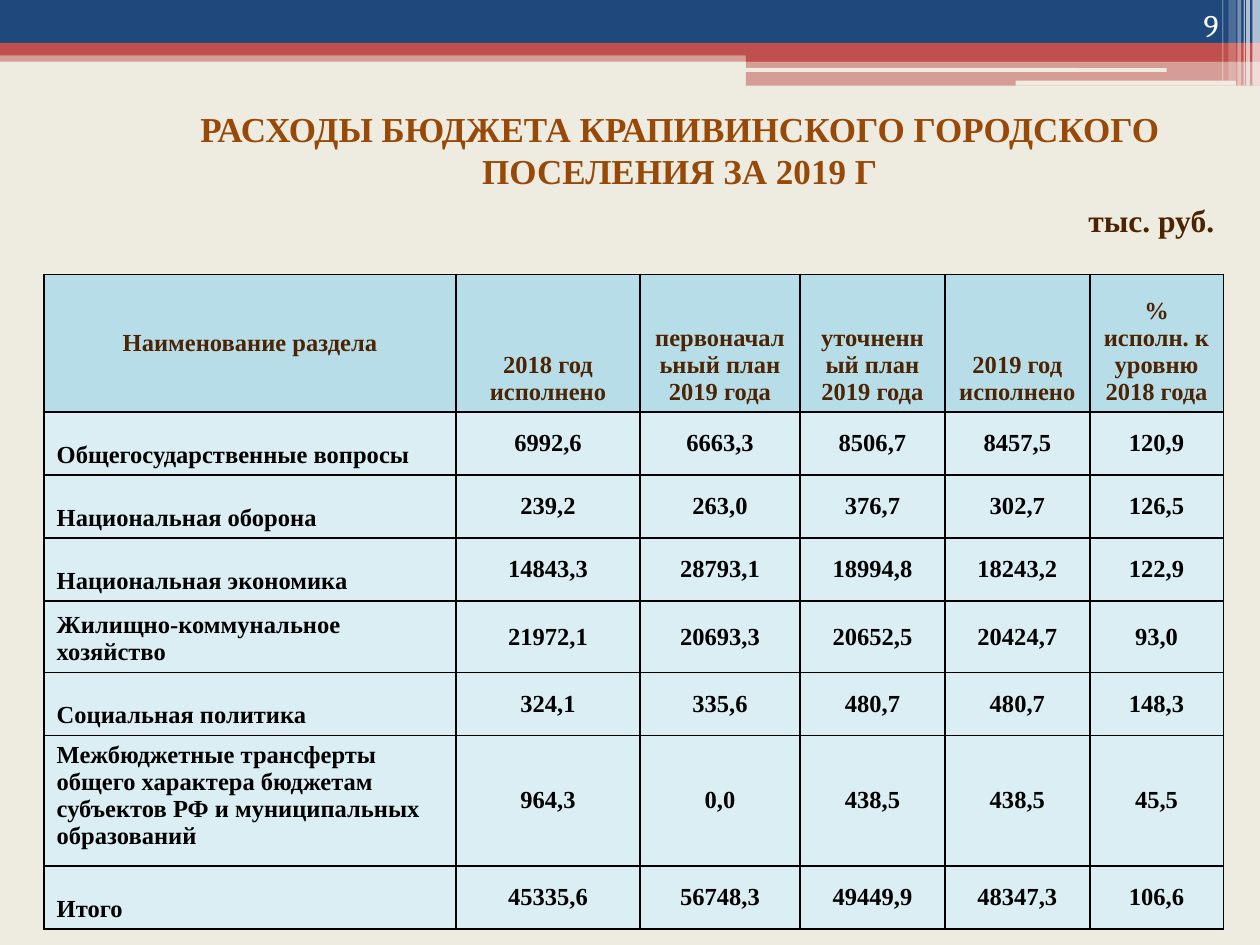
import dataclasses

import lxml.etree
import pptx
import pptx.dml.color
import pptx.enum.shapes
import pptx.enum.text
import pptx.oxml
import pptx.oxml.ns
import pptx.util

QN = pptx.oxml.ns.qn
ALIGN = pptx.enum.text.PP_ALIGN
ANCHOR = pptx.enum.text.MSO_ANCHOR
SHAPE = pptx.enum.shapes.MSO_SHAPE
UNIT = pptx.util.Inches(0.1)  # the slide is a grid of 100 columns by 75 rows


@dataclasses.dataclass(frozen=True)
class Theme:
    paper: str = "EEECE1"
    navy: str = "1F497D"
    red: str = "C0504D"
    white: str = "FFFFFF"
    black: str = "000000"
    title: str = "984807"
    brown: str = "4D2403"
    head: str = "B7DEE8"
    body: str = "DBEEF4"
    serif: str = "Times New Roman"
    number: str = "Cambria"
    large: int = 20
    mid: int = 18
    small: int = 14
    border: int = 1


THEME = Theme()

# column, row, columns wide, rows high, colour, opacity in percent
BANDS = [
    (0, 4, 100, 0.9, THEME.red, 50),
    (0, 0, 100, 3.4, THEME.navy, 100),
    (0, 3.4, 100, 1, THEME.red, 100),
    (59.2, 3.9, 40.8, 1, THEME.red, 100),
    (59.2, 4.8, 40.8, 2, THEME.red, 50),
]
SLOTS = [
    (59.1, 5.4, 33.5, 0.3, THEME.paper, 100),
    (80.6, 6.4, 17.5, 0.4, THEME.paper, 100),
]
# column, columns wide, rows high, opacity in percent
STRIPES = [
    (99.4, 0.6, 6.8, 65),
    (98.9, 0.3, 6.8, 65),
    (98.7, 0.1, 6.8, 60),
    (98.2, 0.3, 6.8, 40),
    (97.5, 0.6, 6.4, 20),
    (97, 0.1, 6.4, 30),
]

COLS = [32.7, 14.6, 12.7, 11.5, 11.5, 10.6]
ROWS = [10.9, 5, 5, 5, 5, 5, 8.9, 5]
DATA = [
    ["Наименование раздела", "2018 год исполнено", "первоначальный план 2019 года",
     "уточненный план 2019 года", "2019 год исполнено", "% исполн. к уровню 2018 года"],
    ["Общегосударственные вопросы", "6992,6", "6663,3", "8506,7", "8457,5", "120,9"],
    ["Национальная оборона", "239,2", "263,0", "376,7", "302,7", "126,5"],
    ["Национальная экономика", "14843,3", "28793,1", "18994,8", "18243,2", "122,9"],
    ["Жилищно-коммунальное хозяйство", "21972,1", "20693,3", "20652,5", "20424,7", "93,0"],
    ["Социальная политика", "324,1", "335,6", "480,7", "480,7", "148,3"],
    ["Межбюджетные трансферты общего характера бюджетам субъектов РФ и "
     "муниципальных образований", "964,3", "0,0", "438,5", "438,5", "45,5"],
    ["Итого", "45335,6", "56748,3", "49449,9", "48347,3", "106,6"],
]
LONG_ROW = 6


def grid(*cells):
    return [round(cell * UNIT) for cell in cells]


def rgb(code):
    return pptx.dml.color.RGBColor.from_string(code)


def paint(item, color):
    item.fill.solid()
    item.fill.fore_color.rgb = rgb(color)


def write(frame, text, size, color, align, anchor, font=THEME.serif, bold=True):
    frame.text = text
    frame.word_wrap = True
    frame.vertical_anchor = anchor
    for para in frame.paragraphs:
        para.alignment = align
        for run in para.runs:
            run.font.name = font
            run.font.size = pptx.util.Pt(size)
            run.font.bold = bold
            run.font.color.rgb = rgb(color)


def add_bar(slide, box, color, alpha=100, kind=SHAPE.RECTANGLE):
    bar = slide.shapes.add_shape(kind, *grid(*box))
    bar.shadow.inherit = False
    bar.line.fill.background()
    paint(bar, color)
    if alpha < 100:
        tint = bar.element.spPr.find(".//" + QN("a:srgbClr"))
        lxml.etree.SubElement(tint, QN("a:alpha")).set("val", str(alpha * 1000))


def add_decor(slide):
    for *box, color, alpha in BANDS:
        add_bar(slide, box, color, alpha)
    for *box, color, alpha in SLOTS:
        add_bar(slide, box, color, alpha, SHAPE.ROUNDED_RECTANGLE)
    for left, width, height, alpha in STRIPES:
        add_bar(slide, (left, 0, width, height), THEME.white, alpha)


def set_title(slide, text):
    title = slide.shapes.title
    title.left, title.top, title.width, title.height = grid(12.2, 5.2, 83.5, 13.4)
    write(title.text_frame, text, THEME.large, THEME.title, ALIGN.CENTER, ANCHOR.MIDDLE)
    title.element.getparent().append(title.element)  # in front of the bars


def add_label(slide, box, *args, **style):
    label = slide.shapes.add_textbox(*grid(*box))
    write(label.text_frame, *args, **style)


def add_border(cell):
    props = cell._tc.get_or_add_tcPr()
    for side in ("a:lnL", "a:lnR", "a:lnT", "a:lnB"):
        line = lxml.etree.SubElement(props, QN(side))
        line.set("w", str(pptx.util.Pt(THEME.border)))
        fill = lxml.etree.SubElement(line, QN("a:solidFill"))
        lxml.etree.SubElement(fill, QN("a:srgbClr")).set("val", THEME.black)


def place(row, col):
    """Return the alignment and anchor of a table cell."""
    if row == 0:
        return ALIGN.CENTER, ANCHOR.BOTTOM if col else ANCHOR.MIDDLE
    if col:
        return ALIGN.CENTER, ANCHOR.MIDDLE
    return ALIGN.LEFT, ANCHOR.TOP if row == LONG_ROW else ANCHOR.BOTTOM


def add_grid(slide):
    box = grid(3.5, 21.8, sum(COLS), sum(ROWS))
    table = slide.shapes.add_table(len(ROWS), len(COLS), *box).table
    table.horz_banding = False
    table.first_row = False
    for col, width in zip(table.columns, grid(*COLS)):
        col.width = width
    for row, height in zip(table.rows, grid(*ROWS)):
        row.height = height
    for r, texts in enumerate(DATA):
        for c, text in enumerate(texts):
            cell = table.cell(r, c)
            align, anchor = place(r, c)
            color = THEME.black if r else THEME.brown
            write(cell.text_frame, text, THEME.small, color, align, None)
            cell.vertical_anchor = anchor
            add_border(cell)
            paint(cell, THEME.body if r else THEME.head)


def main():
    deck = pptx.Presentation()
    deck.slide_width, deck.slide_height = grid(100, 75)
    slide = deck.slides.add_slide(deck.slide_layouts[5])
    paint(slide.background, THEME.paper)
    add_decor(slide)
    set_title(slide, "РАСХОДЫ БЮДЖЕТА КРАПИВИНСКОГО ГОРОДСКОГО ПОСЕЛЕНИЯ ЗА 2019 Г")
    add_label(slide, (89.4, 0, 8.3, 4), "9", THEME.mid, THEME.white,
              ALIGN.RIGHT, ANCHOR.BOTTOM, font=THEME.number, bold=False)
    add_grid(slide)
    add_label(slide, (85.4, 15.5, 14.6, 4), "тыс. руб.", THEME.mid, THEME.brown,
              ALIGN.LEFT, ANCHOR.TOP)
    deck.save("out.pptx")


if __name__ == "__main__":
    main()
